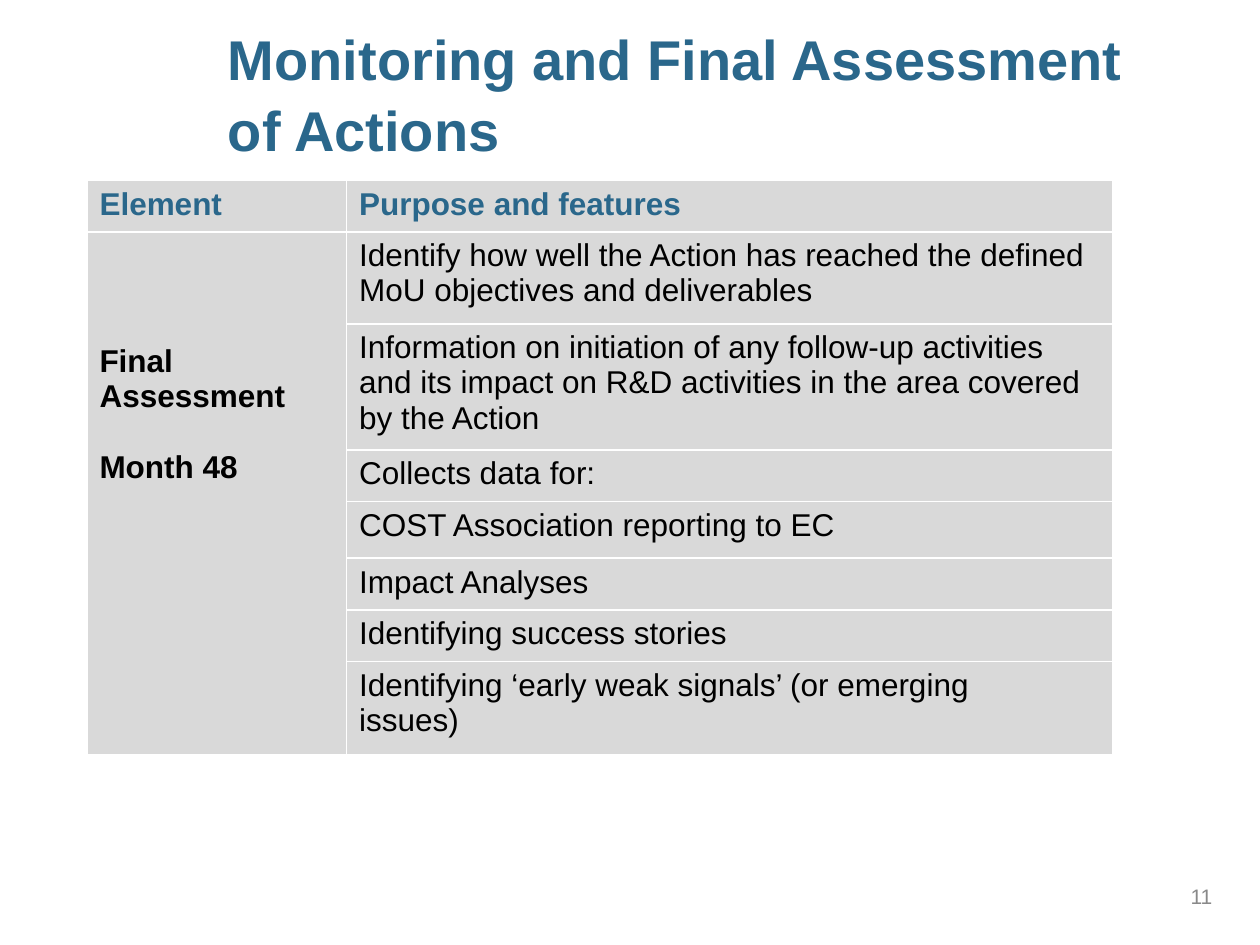
from pptx import Presentation
from pptx.dml.color import RGBColor
from pptx.enum.text import MSO_ANCHOR, PP_ALIGN
from pptx.util import Inches, Pt

TITLE_BLUE, BLACK, GREY, CELL_FILL = "2A678B", "000000", "898989", "D9D9D9"
COLUMN_WIDTHS = [2.06, 6.08]
ROW_HEIGHTS = [0.41, 0.73, 0.99, 0.41, 0.45, 0.41, 0.41, 0.74]
HEADINGS = ["Element", "Purpose and features"]
ASSESSMENT = ["Final Assessment", "Month 48"]
PURPOSES = [
    ["Identify how well the Action has reached the defined MoU objectives and deliverables"],
    ["Information on initiation of any follow-up activities and its impact on R&D "
     "activities in the area covered by the Action"],
    ["Collects data for:"],
    ["COST Association reporting to EC"],
    ["Impact Analyses"],
    ["Identifying success stories"],
    ["Identifying ‘early weak signals’ (or emerging", "issues)"],
]


def color(hex_value):
    return RGBColor.from_string(hex_value)


def write(text_frame, lines, size, hex_value, bold=False):
    """Write one paragraph per line and return the paragraphs."""
    text_frame.word_wrap = True
    for index, line in enumerate(lines):
        paragraph = text_frame.add_paragraph() if index else text_frame.paragraphs[0]
        run = paragraph.add_run()
        run.text = line
        run.font.name = "Arial"
        run.font.size = Pt(size)
        run.font.bold = bold
        run.font.color.rgb = color(hex_value)
    return text_frame.paragraphs


def add_title(slide, left, top, width, height):
    box = slide.shapes.add_textbox(Inches(left), Inches(top), Inches(width), Inches(height))
    title = write(box.text_frame, ["Monitoring and Final Assessment of Actions"],
                  32, TITLE_BLUE, bold=True)
    title[0].line_spacing = 1.06


def add_assessment_table(slide, left, top, width, height):
    frame = slide.shapes.add_table(len(ROW_HEIGHTS), len(COLUMN_WIDTHS), Inches(left),
                                   Inches(top), Inches(width), Inches(height))
    table = frame.table
    table.horz_banding = False
    for column, column_width in zip(table.columns, COLUMN_WIDTHS):
        column.width = Inches(column_width)
    for row, row_height in zip(table.rows, ROW_HEIGHTS):
        row.height = Inches(row_height)
    for cell in table.iter_cells():
        cell.fill.solid()
        cell.fill.fore_color.rgb = color(CELL_FILL)

    # Header row
    for cell, heading in zip(table.rows[0].cells, HEADINGS):
        write(cell.text_frame, [heading], 18, TITLE_BLUE, bold=True)

    # Element, merged down the first column
    element = table.cell(1, 0)
    element.merge(table.cell(len(PURPOSES), 0))
    element.margin_top = Inches(0.89)
    paragraphs = write(element.text_frame, ASSESSMENT, 18, BLACK, bold=True)
    paragraphs[1].space_before = Pt(20)

    # Purposes and features
    for row_index, lines in enumerate(PURPOSES, start=1):
        write(table.cell(row_index, 1).text_frame, lines, 18, BLACK)


def add_page_number(slide, left, top, width, height):
    box = slide.shapes.add_textbox(Inches(left), Inches(top), Inches(width), Inches(height))
    box.text_frame.vertical_anchor = MSO_ANCHOR.MIDDLE
    number = write(box.text_frame, ["11"], 12, GREY)
    number[0].alignment = PP_ALIGN.RIGHT


def main():
    presentation = Presentation()
    presentation.slide_width = Inches(10)
    presentation.slide_height = Inches(7.5)
    slide = presentation.slides.add_slide(presentation.slide_layouts[6])
    add_page_number(slide, 9.1, 6.91, 0.62, 0.4)
    add_title(slide, 1.71, 0.11, 7.75, 1.18)
    add_assessment_table(slide, 0.69, 1.43, sum(COLUMN_WIDTHS), sum(ROW_HEIGHTS))
    presentation.save("out.pptx")


if __name__ == "__main__":
    main()
